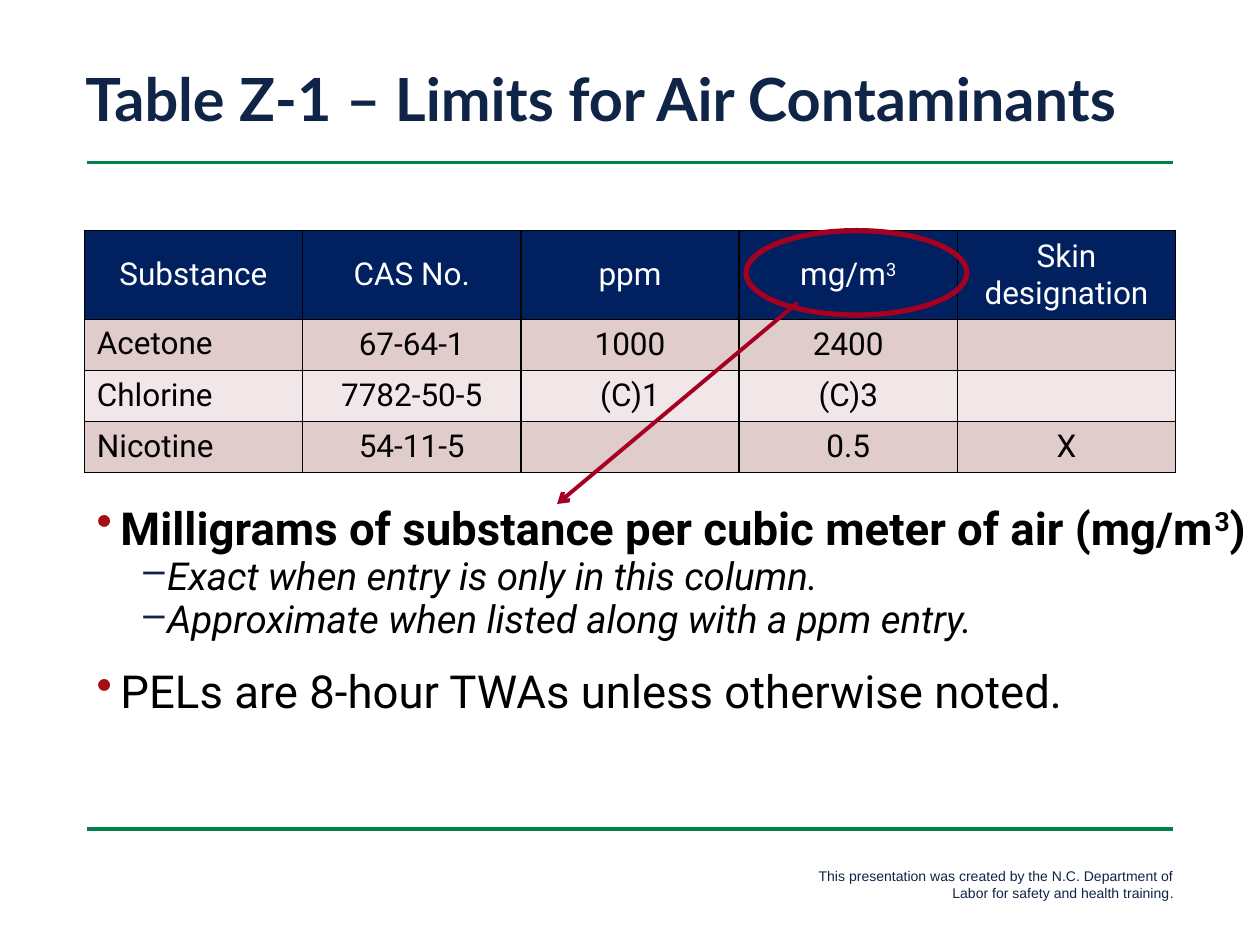
from dataclasses import dataclass

from lxml import etree
from pptx import Presentation
from pptx.dml.color import RGBColor
from pptx.enum.shapes import MSO_CONNECTOR, MSO_SHAPE
from pptx.enum.text import MSO_ANCHOR, PP_ALIGN
from pptx.oxml.ns import qn
from pptx.util import Cm, Pt

LEFT, CENTER, RIGHT = PP_ALIGN.LEFT, PP_ALIGN.CENTER, PP_ALIGN.RIGHT
TOP, MIDDLE = MSO_ANCHOR.TOP, MSO_ANCHOR.MIDDLE
STRAIGHT = MSO_CONNECTOR.STRAIGHT
OVAL = MSO_SHAPE.OVAL


@dataclass(frozen=True)
class Theme:
    heading_font: str = "Lato"
    body_font: str = "Roboto"
    footer_font: str = "Arial"
    title_size: float = 34
    point_size: float = 26
    detail_size: float = 22
    table_size: float = 18
    footer_size: float = 8
    navy: str = "102447"
    violet: str = "2B0E62"
    rule: str = "00814A"
    accent: str = "A50021"
    bullet: str = "A70D15"
    header: str = "002060"
    bands: tuple = ("E1CCCC", "F1E7E8")
    white: str = "FFFFFF"
    black: str = "000000"


def rgb(value):
    return RGBColor.from_string(value)


def add_child(parent, tag, **attributes):
    return etree.SubElement(parent, qn(tag), attributes)


def add_color(parent, value):
    add_child(parent, "a:srgbClr", val=value)


class SlideBuilder:
    def __init__(self, slide, theme):
        self.shapes = slide.shapes
        self.theme = theme

    def add_text(self, paragraph, text, font, size, color, bold=False, italic=False):
        for index, part in enumerate(text.split("^")):
            run = paragraph.add_run()
            run.text = part
            run.font.name = font
            run.font.size = Pt(size)
            run.font.bold = bold
            run.font.italic = italic
            run.font.color.rgb = rgb(color)
            if index % 2:
                run._r.get_or_add_rPr().set("baseline", "30000")

    def text_frame(self, left, top, width, height, anchor=TOP):
        frame = self.shapes.add_textbox(Cm(left), Cm(top), Cm(width), Cm(height)).text_frame
        frame.word_wrap = True
        frame.vertical_anchor = anchor
        return frame

    def title(self, text):
        paragraph = self.text_frame(1.47, 1.27, 23.5, 1.6, MIDDLE).paragraphs[0]
        paragraph.line_spacing = 0.9
        self.add_text(paragraph, text, self.theme.heading_font, self.theme.title_size,
                      self.theme.navy, bold=True)

    def footer(self, text, ending):
        paragraph = self.text_frame(15.65, 17.37, 8.26, 0.94).paragraphs[0]
        paragraph.alignment = RIGHT
        for part, color in ((text, self.theme.navy), (ending, self.theme.violet)):
            self.add_text(paragraph, part, self.theme.footer_font, self.theme.footer_size, color)

    def line(self, start, end, color, weight, arrow=False):
        connector = self.shapes.add_connector(STRAIGHT, *map(Cm, start + end))
        connector.line.color.rgb = rgb(color)
        connector.line.width = Pt(weight)
        properties = connector._element.spPr
        if arrow:
            add_child(properties.find(qn("a:ln")), "a:tailEnd", type="arrow")
        add_child(properties, "a:effectLst")

    def ring(self, left, top, width, height):
        ellipse = self.shapes.add_shape(OVAL, Cm(left), Cm(top), Cm(width), Cm(height))
        ellipse.shadow.inherit = False
        ellipse.fill.background()
        ellipse.line.color.rgb = rgb(self.theme.accent)
        ellipse.line.width = Pt(3)

    def cell(self, cell, text, fill, color, align, anchor):
        properties = cell._tc.get_or_add_tcPr()
        for side in ("a:lnL", "a:lnR", "a:lnT", "a:lnB"):
            border = add_child(properties, side, w=str(Pt(1)))
            add_color(add_child(border, "a:solidFill"), self.theme.black)
        cell.fill.solid()
        cell.fill.fore_color.rgb = rgb(fill)
        cell.vertical_anchor = anchor
        paragraph = cell.text_frame.paragraphs[0]
        paragraph.alignment = align
        if text:
            self.add_text(paragraph, text, self.theme.body_font, self.theme.table_size, color)
        else:
            paragraph.font.size = Pt(self.theme.table_size)

    def table(self, rows, left, top, column_width, header_height, row_height):
        columns = len(rows[0])
        heights = [header_height] + [row_height] * (len(rows) - 1)
        grid = self.shapes.add_table(len(rows), columns, Cm(left), Cm(top),
                                     Cm(column_width * columns), Cm(sum(heights))).table
        for column in grid.columns:
            column.width = Cm(column_width)
        for r, (values, height) in enumerate(zip(rows, heights)):
            grid.rows[r].height = Cm(height)
            fill = self.theme.bands[(r - 1) % 2] if r else self.theme.header
            color = self.theme.black if r else self.theme.white
            for c, value in enumerate(values):
                is_substance = r > 0 and c == 0
                self.cell(grid.cell(r, c), value, fill, color,
                          LEFT if is_substance else CENTER,
                          TOP if is_substance else MIDDLE)

    def bullets(self, points, left, top, width, height):
        frame = self.text_frame(left, top, width, height)
        for index, (level, text, bold, space) in enumerate(points):
            paragraph = frame.add_paragraph() if index else frame.paragraphs[0]
            paragraph.level = level
            properties = paragraph._p.get_or_add_pPr()
            properties.set("marL", str(Cm(1.42 if level else 0.48)))
            properties.set("indent", str(Cm(-0.48)))
            add_color(add_child(properties, "a:buClr"),
                      self.theme.navy if level else self.theme.bullet)
            add_child(properties, "a:buChar", char="–" if level else "•")
            paragraph.line_spacing = 0.8
            paragraph.space_before = Pt(space)
            size = self.theme.detail_size if level else self.theme.point_size
            self.add_text(paragraph, text, self.theme.body_font, size, self.theme.black,
                          bold, italic=level > 0)


def main():
    theme = Theme()
    presentation = Presentation()
    presentation.slide_width = Cm(25.4)
    presentation.slide_height = Cm(19.05)
    page = SlideBuilder(presentation.slides.add_slide(presentation.slide_layouts[6]), theme)

    for rule_y in (3.28, 16.71):
        page.line((1.75, rule_y), (23.65, rule_y), theme.rule, 2)
    page.footer("This presentation was created by the N.C. Department of "
                "Labor for safety and health training", ".")

    limits = [
        ("Substance", "CAS No.", "ppm", "mg/m^3", "Skin designation"),
        ("Acetone", "67-64-1", "1000", "2400", ""),
        ("Chlorine", "7782-50-5", "(C)1", "(C)3", ""),
        ("Nicotine", "54-11-5", "", "0.5", "X"),
    ]
    page.table(limits, left=1.7, top=4.65, column_width=4.4, header_height=1.79, row_height=1.03)
    page.ring(15.04, 4.65, 4.45, 1.7)
    page.line((16.08, 6.1), (11.23, 10.16), theme.accent, 2.25, arrow=True)

    notes = [
        (0, "Milligrams of substance per cubic meter of air (mg/m^3^)", True, 0),
        (1, "Exact when entry is only in this column.", False, 3.8),
        (1, "Approximate when listed along with a ppm entry.", False, 3.8),
        (0, "PELs are 8-hour TWAs unless otherwise noted.", False, 18.8),
    ]
    page.bullets(notes, 1.7, 10.16, 24.13, 5.51)
    page.title("Table Z-1 – Limits for Air Contaminants")
    presentation.save("out.pptx")


if __name__ == "__main__":
    main()
